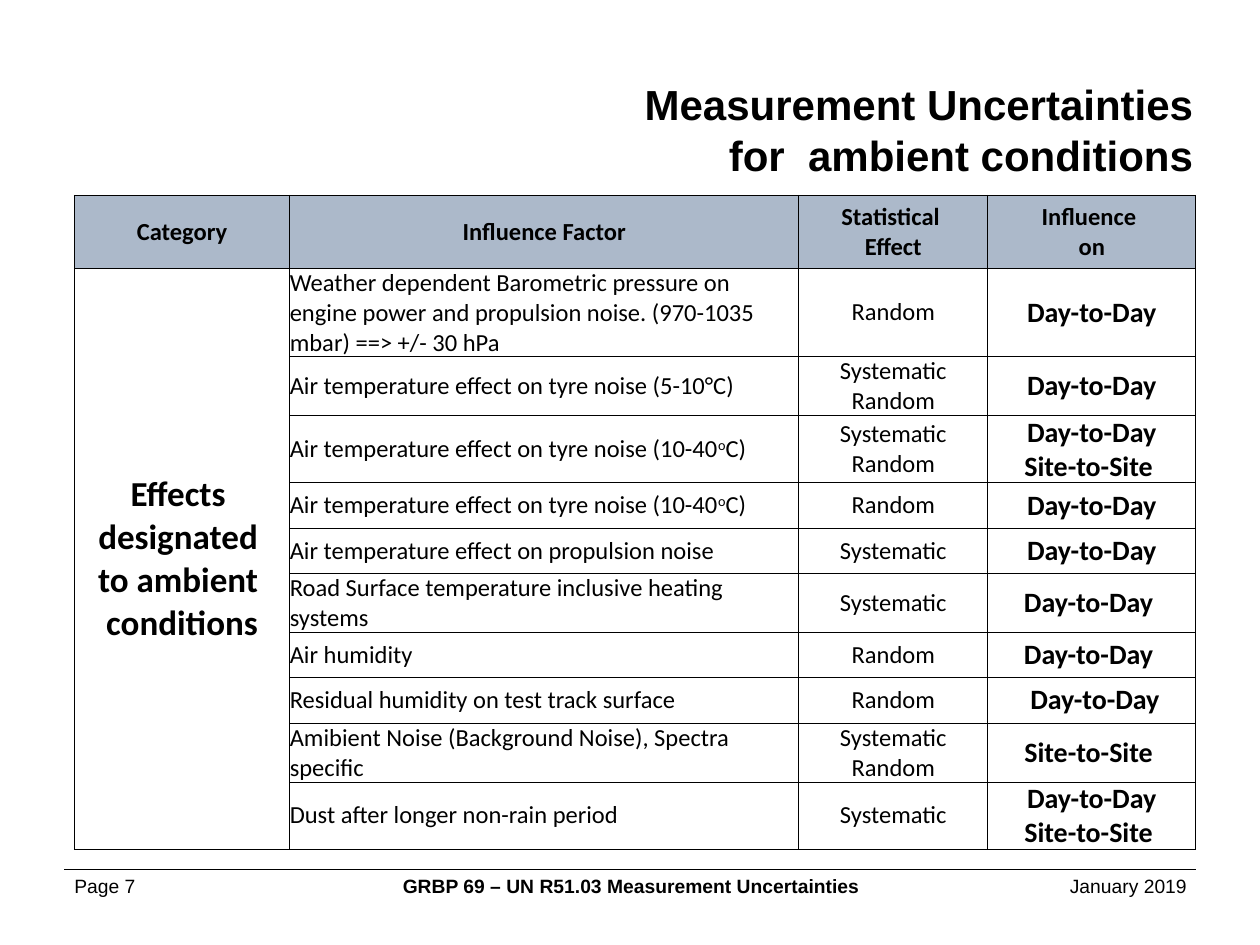
"""Build the slide on measurement uncertainties for ambient conditions."""
from dataclasses import dataclass

from lxml import etree
from pptx import Presentation
from pptx.dml.color import RGBColor
from pptx.enum.shapes import MSO_CONNECTOR
from pptx.enum.text import MSO_ANCHOR, MSO_AUTO_SIZE, PP_ALIGN
from pptx.oxml.ns import qn
from pptx.util import Inches, Pt

LEFT, CENTER, RIGHT = PP_ALIGN.LEFT, PP_ALIGN.CENTER, PP_ALIGN.RIGHT
MIDDLE = MSO_ANCHOR.MIDDLE
NO_AUTOFIT = MSO_AUTO_SIZE.NONE
STRAIGHT = MSO_CONNECTOR.STRAIGHT


@dataclass(frozen=True)
class Theme:
    """Colours, fonts and type sizes of the slide."""
    ink: RGBColor = RGBColor(0x00, 0x00, 0x00)
    header_fill: RGBColor = RGBColor(0xAC, 0xB9, 0xCA)
    heading_font: str = "Arial"
    table_font: str = "Calibri"
    title_size: Pt = Pt(24)
    category_size: Pt = Pt(20)
    influence_size: Pt = Pt(16)
    body_size: Pt = Pt(14)
    footer_size: Pt = Pt(11)
    rule_width: Pt = Pt(1)
    border_width: Pt = Pt(0.5)


THEME = Theme()
TITLE = ["Measurement Uncertainties", "for  ambient conditions"]
FOOTER = [("Page 7\t", False),
          ("GRBP 69 – UN R51.03 Measurement Uncertainties\t", True),
          ("January 2019", False)]
COLUMN_WIDTHS = [1.71, 4.04, 1.5, 1.65]
ROW_HEIGHTS = [0.58, 0.67, 0.45, 0.51, 0.36, 0.36, 0.45, 0.36, 0.36, 0.45, 0.51]
HEADER = ["Category", "Influence Factor", "Statistical \nEffect", "Influence \non"]
CATEGORY = "Effects \ndesignated \nto ambient \nconditions"
BOTH_EFFECTS = "Systematic\nRandom"
BOTH_INFLUENCES = "Day-to-Day\nSite-to-Site "
FACTORS = [
    ("Weather dependent Barometric pressure on engine power and propulsion noise. "
     "(970-1035 mbar) ==> +/- 30 hPa", "Random", "Day-to-Day"),
    ("Air temperature effect on tyre noise (5-10°C)", BOTH_EFFECTS, "Day-to-Day"),
    ("Air temperature effect on tyre noise (10-40^o^C)", BOTH_EFFECTS, BOTH_INFLUENCES),
    ("Air temperature effect on tyre noise (10-40^o^C)", "Random", "Day-to-Day"),
    ("Air temperature effect on propulsion noise", "Systematic", "Day-to-Day"),
    ("Road Surface temperature inclusive heating systems", "Systematic", "Day-to-Day "),
    ("Air humidity", "Random", "Day-to-Day "),
    ("Residual humidity on test track surface", "Random", " Day-to-Day"),
    ("Amibient Noise (Background Noise), Spectra specific", BOTH_EFFECTS, "Site-to-Site "),
    ("Dust after longer non-rain period", "Systematic", BOTH_INFLUENCES),
]
HEADER_STYLE = (CENTER, {"name": THEME.table_font, "size": THEME.body_size, "bold": True})
COLUMN_STYLES = [
    (CENTER, {"name": THEME.table_font, "size": THEME.category_size, "bold": True}),
    (LEFT, {"name": THEME.table_font, "size": THEME.body_size, "bold": False}),
    (CENTER, {"name": THEME.table_font, "size": THEME.body_size, "bold": False}),
    (CENTER, {"name": THEME.table_font, "size": THEME.influence_size, "bold": True}),
]


def apply(target, values):
    """Set each attribute of the target from a dict of values."""
    for name, value in values.items():
        setattr(target, name, value)


def add_run(paragraph, text, font_values):
    """Add a run in the ink colour and return it."""
    run = paragraph.add_run()
    run.text = text
    apply(run.font, font_values)
    run.font.color.rgb = THEME.ink
    return run


def write_lines(frame, lines, alignment, font_values):
    """Write one paragraph per line, raising what stands between carets."""
    for index, line in enumerate(lines):
        paragraph = frame.add_paragraph() if index else frame.paragraphs[0]
        apply(paragraph, {"alignment": alignment, "line_spacing": 1.0,
                          "space_before": Pt(0)})
        for position, piece in enumerate(line.split("^")):
            run = add_run(paragraph, piece, font_values)
            if position % 2:
                run.font._element.set("baseline", "30000")


def add_title(slide):
    """Place the right-aligned title."""
    title = slide.shapes.title
    apply(title, {"left": Inches(4.06), "top": Inches(0.57),
                  "width": Inches(5.51), "height": Inches(0.91)})
    apply(title.text_frame, {"auto_size": NO_AUTOFIT, "word_wrap": True,
                             "vertical_anchor": MIDDLE})
    write_lines(title.text_frame, TITLE, RIGHT,
                {"name": THEME.heading_font, "size": THEME.title_size, "bold": True})


def add_footer_rule(slide):
    """Draw the line above the footer."""
    rule = slide.shapes.add_connector(
        STRAIGHT, Inches(0.51), Inches(6.9), Inches(9.49), Inches(6.9))
    rule.line.color.rgb = THEME.ink
    rule.line.width = THEME.rule_width
    etree.SubElement(rule._element.spPr, qn("a:effectLst"))


def add_footer(slide):
    """Write page, subject and date at tab stops."""
    footer = slide.shapes.add_textbox(Inches(0.28), Inches(6.89), Inches(9.45), Inches(0.29))
    footer.text_frame.word_wrap = True
    paragraph = footer.text_frame.paragraphs[0]
    paragraph.alignment = CENTER
    tab_list = etree.SubElement(paragraph._p.get_or_add_pPr(), qn("a:tabLst"))
    for position, alignment in ((4.42, "ctr"), (8.83, "r")):
        etree.SubElement(tab_list, qn("a:tab"), pos=str(Inches(position)), algn=alignment)
    for text, bold in FOOTER:
        add_run(paragraph, text, {"name": THEME.heading_font,
                                  "size": THEME.footer_size, "bold": bold})


def add_borders(cell):
    """Draw a thin line on all four sides of the cell."""
    properties = cell._tc.get_or_add_tcPr()
    for index, side in enumerate(("lnL", "lnR", "lnT", "lnB")):
        border = etree.Element(qn(f"a:{side}"), w=str(THEME.border_width))
        fill = etree.SubElement(border, qn("a:solidFill"))
        etree.SubElement(fill, qn("a:srgbClr"), val=str(THEME.ink))
        properties.insert(index, border)


def format_cell(cell, is_header):
    """Set margins, anchor, fill and borders of a cell."""
    apply(cell, {"margin_left": 0, "margin_right": 0, "margin_top": 0,
                 "margin_bottom": 0, "vertical_anchor": MIDDLE})
    if is_header:
        cell.fill.solid()
        cell.fill.fore_color.rgb = THEME.header_fill
    else:
        cell.fill.background()
    add_borders(cell)


def add_factor_table(slide):
    """Build the table of influence factors."""
    rows = [HEADER] + [(CATEGORY if index == 0 else "", *factor)
                       for index, factor in enumerate(FACTORS)]
    table = slide.shapes.add_table(
        len(rows), len(HEADER), Inches(0.59), Inches(1.55),
        Inches(sum(COLUMN_WIDTHS)), Inches(sum(ROW_HEIGHTS))).table
    apply(table, {"first_row": False, "horz_banding": False})
    for column, width in zip(table.columns, COLUMN_WIDTHS):
        column.width = Inches(width)
    for row, height in zip(table.rows, ROW_HEIGHTS):
        row.height = Inches(height)
    table.cell(1, 0).merge(table.cell(len(FACTORS), 0))
    for row_index, texts in enumerate(rows):
        for column_index, text in enumerate(texts):
            cell = table.cell(row_index, column_index)
            is_header = row_index == 0
            format_cell(cell, is_header)
            if text:
                style = HEADER_STYLE if is_header else COLUMN_STYLES[column_index]
                write_lines(cell.text_frame, text.split("\n"), *style)


def main():
    """Assemble and save the slide."""
    presentation = Presentation()
    apply(presentation, {"slide_width": Inches(10), "slide_height": Inches(7.5)})
    slide = presentation.slides.add_slide(presentation.slide_layouts[5])
    add_footer_rule(slide)
    add_footer(slide)
    add_factor_table(slide)
    add_title(slide)
    presentation.save("out.pptx")


if __name__ == "__main__":
    main()
